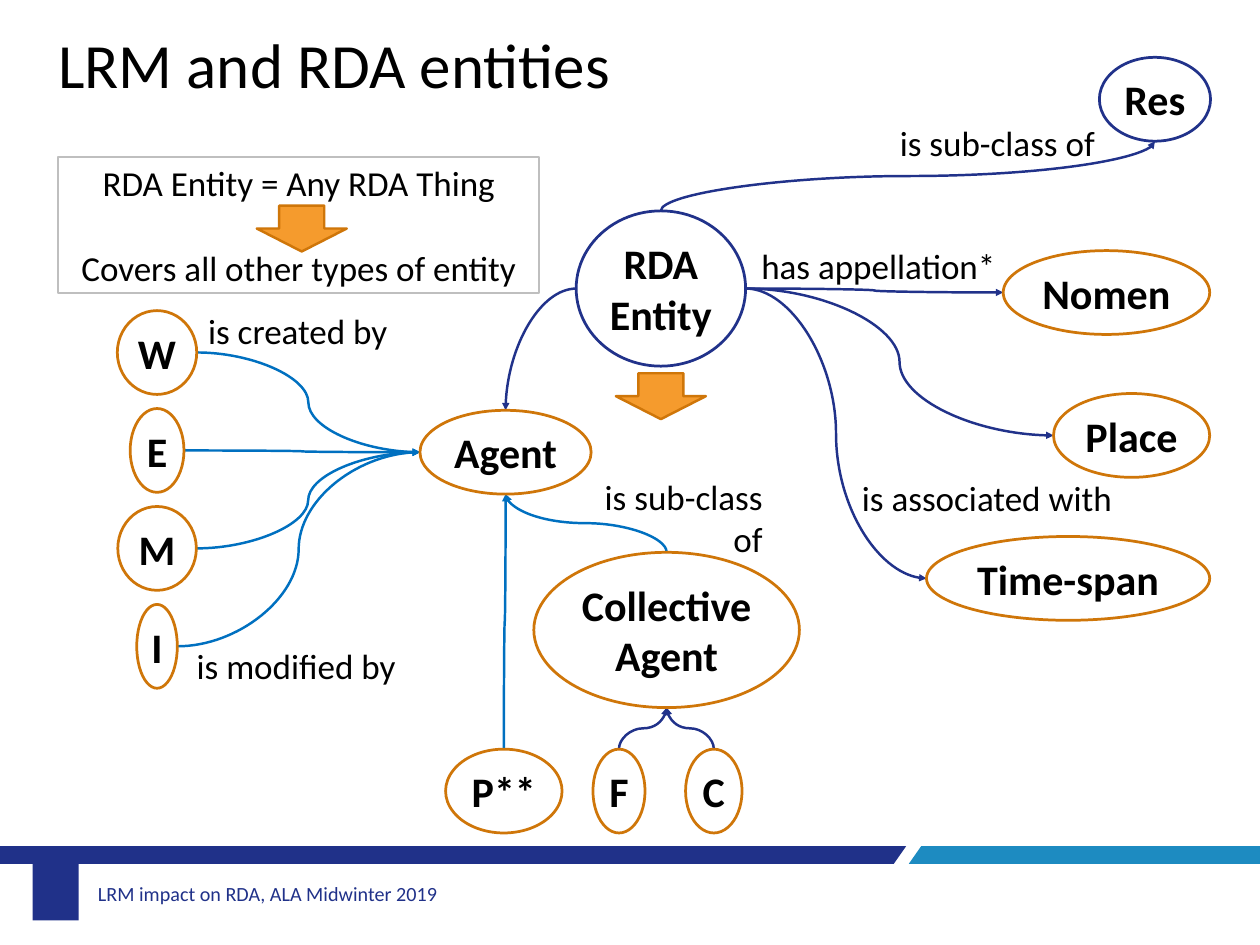
"""Build the slide that maps the LRM and RDA entities."""
from dataclasses import dataclass, field

from lxml import etree
from pptx import Presentation
from pptx import util as u
from pptx.dml.color import RGBColor
from pptx.enum import shapes, text
from pptx.oxml.ns import qn
from pptx.slide import Slide

COLUMNS, ROWS = 14.28, 10.71
ALIGN = text.PP_ALIGN
COLOURS = {
    "black": "000000",
    "band": "203189",
    "accent": "1D8BC1",
    "navy": "21328A",
    "blue": "0070C0",
    "orange": "F59B2D",
    "rust": "CF7609",
    "grey": "BFBFBF",
}


@dataclass
class EntityMap:
    slide: Slide
    width: int
    height: int
    font: str = "Calibri"
    label_size: float = 28.6
    node_size: float = 34.3
    nodes: dict = field(default_factory=dict)

    def x(self, columns):
        return round(self.width * columns / COLUMNS)

    def y(self, rows):
        return round(self.height * rows / ROWS)

    def box(self, left, top, width, height):
        return self.x(left), self.y(top), self.x(width), self.y(height)

    def colour(self, name):
        return RGBColor.from_string(COLOURS[name])

    def paint(self, shape, fill=None, line=None, weight=2):
        shape.shadow.inherit = False
        if fill:
            shape.fill.solid()
            shape.fill.fore_color.rgb = self.colour(fill)
        else:
            shape.fill.background()
        if line:
            shape.line.color.rgb = self.colour(line)
            shape.line.width = u.Pt(weight)
        else:
            shape.line.fill.background()

    def set_words(self, shape, words, size, align=ALIGN.LEFT, colour="black",
                  bold=False, wrap=True, anchor=text.MSO_ANCHOR.TOP):
        frame = shape.text_frame
        frame.text = words
        frame.word_wrap = wrap
        frame.auto_size = text.MSO_AUTO_SIZE.NONE
        frame.vertical_anchor = anchor
        for paragraph in frame.paragraphs:
            paragraph.alignment = align
            for run in paragraph.runs:
                run.font.name = self.font
                run.font.size = u.Pt(size)
                run.font.bold = bold
                run.font.color.rgb = self.colour(colour)
        return frame

    def title(self, words, *place):
        heading = self.slide.shapes.title
        heading.left, heading.top, heading.width, heading.height = self.box(*place)
        self.set_words(heading, words, 51.4)

    def label(self, words, *place, **style):
        caption = self.slide.shapes.add_textbox(*self.box(*place))
        return self.set_words(caption, words, **{"size": self.label_size, **style})

    def preset(self, kind, *place, **paint):
        shape = self.slide.shapes.add_shape(kind, *self.box(*place))
        self.paint(shape, **paint)
        return shape

    def outline(self, points, fill):
        start, *rest = [(self.x(x), self.y(y)) for x, y in points]
        builder = self.slide.shapes.build_freeform(*start)
        builder.add_line_segments(rest, close=True)
        self.paint(builder.convert_to_shape(), fill)

    def node(self, words, line):
        ellipse = self.preset(shapes.MSO_SHAPE.OVAL, *self.nodes[words],
                              line=line, weight=2.25)
        self.set_words(ellipse, words, self.node_size, ALIGN.CENTER, bold=True, wrap=False)

    def side(self, name, where):
        left, top, width, height = self.nodes[name]
        across, down = {"top": (0.5, 0), "left": (0, 0.5),
                        "bottom": (0.5, 1), "right": (1, 0.5)}[where]
        return self.x(left + width * across), self.y(top + height * down)

    def link(self, source, leave, target, arrive, colour):
        x1, y1 = self.side(source, leave)
        x2, y2 = self.side(target, arrive)
        curve = self.slide.shapes.add_connector(
            shapes.MSO_CONNECTOR.CURVE, x1, y1, x2, y2)
        properties = curve._element.spPr
        frame = properties.find(qn("a:xfrm"))
        if leave == "top":
            across, up = abs(x2 - x1), abs(y2 - y1)
            curve.left, curve.top = (x1 + x2 - up) // 2, (y1 + y2 - across) // 2
            curve.width, curve.height = up, across
            rightward = x2 > x1
            curve.rotation = 90 if rightward else 270
            frame.set("flipH", str(int(rightward)))
            frame.set("flipV", "1")
        elif arrive == "top":
            properties.find(qn("a:prstGeom")).set("prst", "curvedConnector2")
            curve.rotation = 180
            frame.set("flipH", "0")
            frame.set("flipV", "1")
        curve.line.color.rgb = self.colour(colour)
        curve.line.width = u.Pt(2)
        etree.SubElement(properties.find(qn("a:ln")), qn("a:tailEnd"), type="triangle")
        etree.SubElement(properties, qn("a:effectLst"))

    def footer(self, words):
        top, bottom = 9.59, 9.79
        self.outline([(0, top), (10.27, top), (10.13, bottom), (0, bottom)], "band")
        self.outline([(10.44, top), (COLUMNS, top), (COLUMNS, bottom),
                      (10.3, bottom)], "accent")
        self.preset(shapes.MSO_SHAPE.RECTANGLE, 0.37, top, 0.52, 0.84, fill="band")
        frame = self.label(words, 1.04, 9.85, 4.02, 0.55, size=16.4, colour="band",
                           anchor=text.MSO_ANCHOR.MIDDLE)
        frame.margin_left = frame.margin_right = self.x(0.07)
        frame.margin_top = frame.margin_bottom = self.y(0.04)


def entity_boxes():
    low, tall = 0.95, 1.76
    boxes = {
        "RDA\nEntity": (6.53, 2.39, 1.92, tall),
        "Res": (12.46, 0.65, 1.26, low),
        "Agent": (4.76, 4.65, 1.94, low),
        "Collective\nAgent": (6.05, 6.26, 3.01, tall),
    }
    for row, (name, width) in enumerate(
            {"W": 0.9, "E": 0.61, "M": 0.89, "I": 0.46}.items()):
        boxes[name] = (1.78 - width / 2, 3.52 + 1.11 * row, width, low)
    for row, (name, width) in enumerate(
            {"Nomen": 2.34, "Place": 1.77, "Time-span": 3.21}.items()):
        boxes[name] = (13.71 - width, 2.84 + 1.62 * row, width, low)
    for name, left, width in (("P**", 5.05, 1.32), ("F", 6.72, 0.59), ("C", 7.77, 0.64)):
        boxes[name] = (left, 8.49, width, low)
    return boxes


def main():
    deck = Presentation()
    deck.slide_width, deck.slide_height = u.Inches(COLUMNS), u.Inches(ROWS)
    slide = deck.slides.add_slide(deck.slide_layouts[5])
    chart = EntityMap(slide, deck.slide_width, deck.slide_height, nodes=entity_boxes())
    entity, collective = "RDA\nEntity", "Collective\nAgent"

    chart.title("LRM and RDA entities", 0.56, 0.24, 10.21, 0.97)
    chart.footer("LRM impact on RDA, ALA Midwinter 2019")

    for target in ("Nomen", "Place", "Time-span"):
        chart.link(entity, "right", target, "left", "navy")
    for member in "FC":
        chart.link(member, "top", collective, "bottom", "navy")
    for agent in ("P**", collective):
        chart.link(agent, "top", "Agent", "bottom", "blue")
    for resource in "WEMI":
        chart.link(resource, "right", "Agent", "left", "blue")
    chart.link(entity, "top", "Res", "bottom", "navy")
    chart.link(entity, "left", "Agent", "top", "navy")

    definition = chart.preset(shapes.MSO_SHAPE.RECTANGLE, 0.66, 1.78, 5.45, 1.54,
                              line="grey", weight=1.5)
    meaning = chart.set_words(
        definition, "RDA Entity = Any RDA Thing\nCovers all other types of entity",
        chart.label_size, ALIGN.CENTER)
    meaning.paragraphs[1].space_before = u.Pt(34.9)
    for left, top in ((2.91, 2.33), (6.98, 4.23)):
        chart.preset(shapes.MSO_SHAPE.DOWN_ARROW, left, top, 1.02, 0.52,
                     fill="orange", line="rust")

    for name in chart.nodes:
        chart.node(name, "navy" if name in (entity, "Res") else "rust")

    chart.label("is sub-class of", 10.1, 1.33, 2.54, 0.58)
    chart.label("has appellation*", 8.53, 2.72, 2.88, 0.58)
    chart.label("is associated with", 9.67, 5.35, 3.06, 0.58)
    chart.label("is created by", 2.26, 3.46, 2.25, 0.58)
    chart.label("is modified by", 2.13, 7.25, 2.48, 0.58)
    chart.label("is sub-class\nof", 6.74, 5.34, 2, 1.06, align=ALIGN.RIGHT)

    deck.save("out.pptx")


if __name__ == "__main__":
    main()
